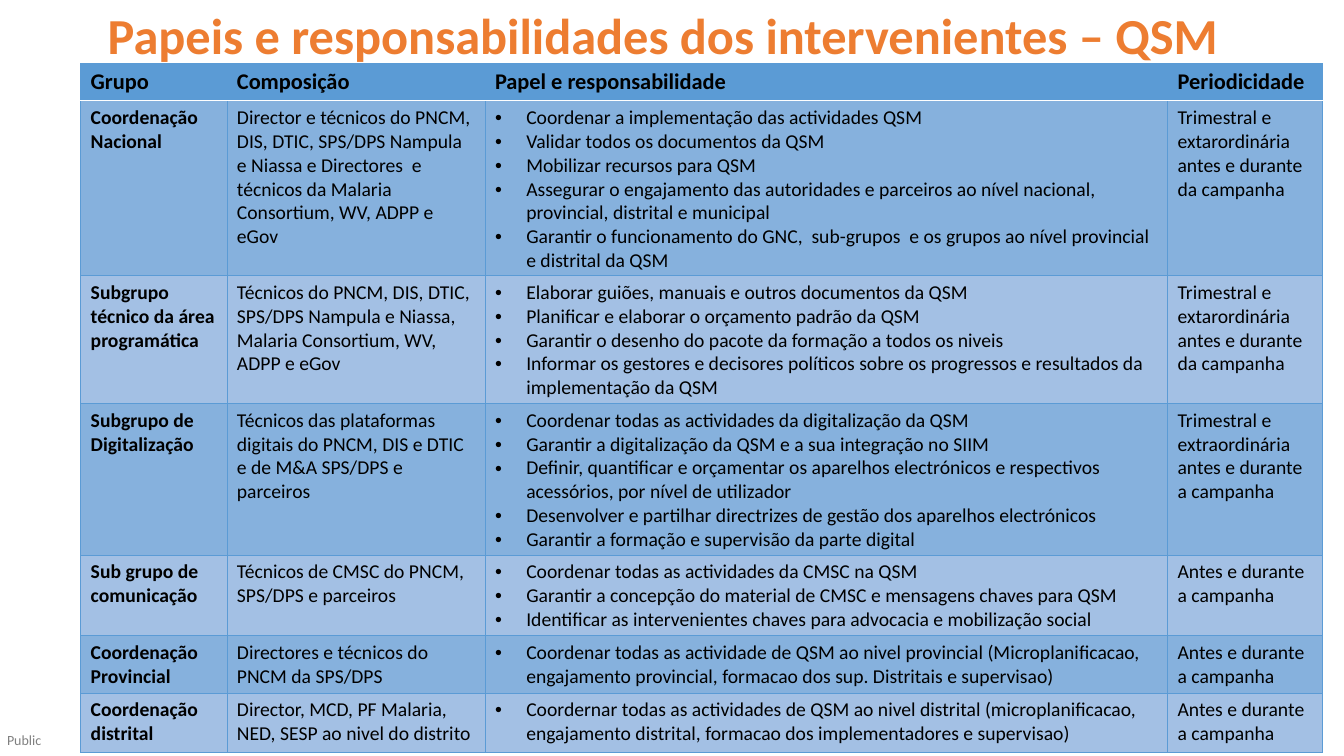
"""Build the slide on roles and duties of the QSM groups."""
from dataclasses import dataclass

import lxml.etree
import pptx
import pptx.dml.color
import pptx.enum.text
import pptx.oxml.ns
import pptx.util

Inches = pptx.util.Inches
Pt = pptx.util.Pt
qn = pptx.oxml.ns.qn

BLUE = "5B9BD5"
DARK = "86B1DD"
LIGHT = "A3C0E4"
BLACK = "000000"
WHITE = "FFFFFF"
INDENT = 0.31
WIDTHS = (1.45, 2.56, 6.77, 1.54)


@dataclass
class Label:
    text: str
    left: float
    top: float
    width: float
    height: float
    size: int
    shade: str
    bold: bool
    inset: tuple[float, float]


@dataclass
class Group:
    height: float
    name: str
    staff: str
    tasks: list[str]
    when: str


HEADS = ("Grupo", "Composição", "Papel e responsabilidade", "Periodicidade")
GROUPS = [
    Group(1.73, "Coordenação Nacional",
          "Director e técnicos do PNCM, DIS, DTIC, SPS/DPS Nampula e Niassa e Directores  e "
          "técnicos da Malaria Consortium, WV, ADPP e eGov",
          ["Coordenar a implementação das actividades QSM",
           "Validar todos os documentos da QSM",
           "Mobilizar recursos para QSM",
           "Assegurar o engajamento das autoridades e parceiros ao nível nacional, "
           "provincial, distrital e municipal",
           "Garantir o funcionamento do GNC,  sub-grupos  e os grupos ao nível provincial "
           "e distrital da QSM"],
          "Trimestral e extarordinária antes e durante da campanha"),
    Group(1.27, "Subgrupo técnico da área programática",
          "Técnicos do PNCM, DIS, DTIC, SPS/DPS Nampula e Niassa, Malaria Consortium, WV, "
          "ADPP e eGov",
          ["Elaborar guiões, manuais e outros documentos da QSM",
           "Planificar e elaborar o orçamento padrão da QSM",
           "Garantir o desenho do pacote da formação a todos os niveis",
           "Informar os gestores e decisores políticos sobre os progressos e resultados da "
           "implementação da QSM"],
          "Trimestral e extarordinária antes e durante da campanha"),
    Group(1.5, "Subgrupo de Digitalização",
          "Técnicos das plataformas digitais do PNCM, DIS e DTIC e de M&A SPS/DPS e parceiros",
          ["Coordenar todas as actividades da digitalização da QSM",
           "Garantir a digitalização da QSM e a sua integração no SIIM",
           "Definir, quantificar e orçamentar os aparelhos electrónicos e respectivos "
           "acessórios, por nível de utilizador",
           "Desenvolver e partilhar directrizes de gestão dos aparelhos electrónicos",
           "Garantir a formação e supervisão da parte digital"],
          "Trimestral e extraordinária antes e durante a campanha"),
    Group(0.8, "Sub grupo de comunicação",
          "Técnicos de CMSC do PNCM, SPS/DPS e parceiros",
          ["Coordenar todas as actividades da CMSC na QSM",
           "Garantir a concepção do material de CMSC e mensagens chaves para QSM",
           "Identificar as intervenientes chaves para advocacia e mobilização social"],
          "Antes e durante a campanha"),
    Group(0.57, "Coordenação Provincial",
          "Directores e técnicos do PNCM da SPS/DPS",
          ["Coordenar todas as actividade de QSM ao nivel provincial (Microplanificacao, "
           "engajamento provincial, formacao dos sup. Distritais e supervisao)"],
          "Antes e durante a campanha"),
    Group(0.59, "Coordenação distrital",
          "Director, MCD, PF Malaria, NED, SESP ao nivel do distrito",
          ["Coordernar todas as actividades de QSM ao nivel distrital (microplanificacao, "
           "engajamento distrital, formacao dos implementadores e supervisao)"],
          "Antes e durante a campanha"),
]
TITLE = Label("Papeis e responsabilidades dos intervenientes – QSM",
              0.97, -0.01, 11.99, 0.71, 36, "ED7D31", True, (0.1, 0.05))
MARK = Label("Public", 0.07, 7.26, 0.37, 0.17, 10, "808080", False, (0, 0))


def tint(code: str) -> pptx.dml.color.RGBColor:
    """Turn a hex string into a colour."""
    return pptx.dml.color.RGBColor.from_string(code)


def add_run(para, text: str, size: int, shade: str, bold: bool) -> None:
    """Add one styled run to a paragraph."""
    run = para.add_run()
    run.text = text
    run.font.name = "Calibri"
    run.font.size = Pt(size)
    run.font.bold = bold
    run.font.color.rgb = tint(shade)


def add_label(slide, label: Label) -> None:
    """Draw a text box."""
    box = slide.shapes.add_textbox(Inches(label.left), Inches(label.top),
                                   Inches(label.width), Inches(label.height))
    frame = box.text_frame
    frame.word_wrap = label.bold
    frame.auto_size = pptx.enum.text.MSO_AUTO_SIZE.SHAPE_TO_FIT_TEXT
    side, edge = label.inset
    frame.margin_left = frame.margin_right = Inches(side)
    frame.margin_top = frame.margin_bottom = Inches(edge)
    add_run(frame.paragraphs[0], label.text, label.size, label.shade, label.bold)


def add_dot(para) -> None:
    """Give a paragraph a hanging bullet."""
    props = para._p.get_or_add_pPr()
    props.set("marL", str(Inches(INDENT)))
    props.set("indent", str(-Inches(INDENT)))
    lxml.etree.SubElement(props, qn("a:buFont")).set("typeface", "Arial")
    lxml.etree.SubElement(props, qn("a:buChar")).set("char", "•")


def add_edge(cell, side: str, shade: str, width: float) -> None:
    """Draw one border of a cell."""
    props = cell._tc.get_or_add_tcPr()
    line = lxml.etree.SubElement(props, qn(f"a:ln{side}"))
    line.set("w", str(Pt(width)))
    fill = lxml.etree.SubElement(line, qn("a:solidFill"))
    lxml.etree.SubElement(fill, qn("a:srgbClr")).set("val", shade)


def fill_cell(cell, texts: list[str], size: int, bold: bool, back: str,
              dots: bool, pale: str) -> None:
    """Write, edge and fill a cell; pale names the side with a white line."""
    for side in "LRTB":
        if side == pale:
            add_edge(cell, side, WHITE, 1)
        else:
            add_edge(cell, side, BLUE, 0.5)
    cell.fill.solid()
    cell.fill.fore_color.rgb = tint(back)
    frame = cell.text_frame
    for rank, text in enumerate(texts):
        para = frame.add_paragraph() if rank else frame.paragraphs[0]
        if dots:
            add_dot(para)
        add_run(para, text, size, BLACK, bold)


def add_grid(slide) -> None:
    """Draw the table of groups."""
    heights = [0.37] + [group.height for group in GROUPS]
    grid = slide.shapes.add_table(len(heights), len(WIDTHS), Inches(0.8), Inches(0.63),
                                  Inches(sum(WIDTHS)), Inches(sum(heights))).table
    for col, width in zip(grid.columns, WIDTHS):
        col.width = Inches(width)
    for row, height in zip(grid.rows, heights):
        row.height = Inches(height)
    for col, head in enumerate(HEADS):
        fill_cell(grid.cell(0, col), [head], 16, True, BLUE, False, "B")
    for row, group in enumerate(GROUPS, 1):
        back = DARK if row % 2 else LIGHT
        pale = "T" if row == 1 else ""
        parts = ([group.name], [group.staff], group.tasks, [group.when])
        for col, texts in enumerate(parts):
            fill_cell(grid.cell(row, col), texts, 14, col == 0, back, col == 2, pale)


def main() -> None:
    """Build and save the deck."""
    deck = pptx.Presentation()
    deck.slide_width = Inches(13.33)
    deck.slide_height = Inches(7.5)
    slide = deck.slides.add_slide(deck.slide_layouts[6])
    add_label(slide, MARK)
    add_grid(slide)
    add_label(slide, TITLE)
    deck.save("out.pptx")


if __name__ == "__main__":
    main()
